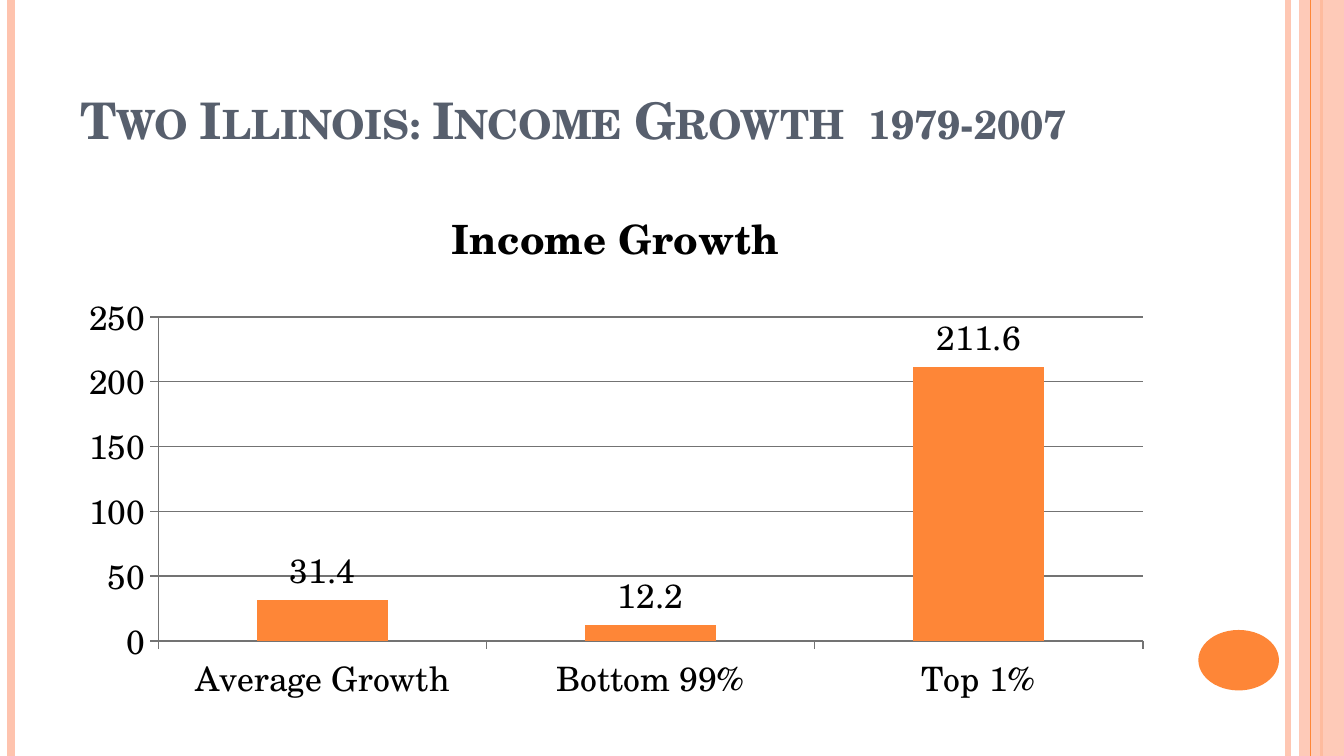
import pptx
import pptx.chart.data
import pptx.dml.color
import pptx.enum.chart
import pptx.enum.shapes
import pptx.enum.text
import pptx.oxml.ns
import pptx.util
from lxml import etree

Pt = pptx.util.Pt
WIDTH, HEIGHT = 720, 405
FONT = "TeX Gyre Schola"
COLORS = {
    "orange": "FE8637",
    "peach": "FEC3AE",
    "slate": "575F6D",
    "black": "000000",
    "axis": "737373",
}


def rgb(name):
    return pptx.dml.color.RGBColor.from_string(COLORS[name])


def set_alpha(element, percent):
    color = element.find(".//" + pptx.oxml.ns.qn("a:srgbClr"))
    alpha = etree.SubElement(color, pptx.oxml.ns.qn("a:alpha"))
    alpha.set("val", str(percent * 1000))


def format_font(font, size, color, bold=False):
    font.name = FONT
    font.size = Pt(size)
    font.bold = bold
    font.color.rgb = rgb(color)


def write_text(frame, text, size=18, color="black", bold=False, small_caps=False):
    paragraph = frame.paragraphs[0]
    run = paragraph.add_run()
    run.text = text
    format_font(run.font, size, color, bold)
    if small_caps:
        run.font._element.set("cap", "small")
    return paragraph


def add_stripe(slide, x, color, width, alpha=100):
    """Draw a full-height vertical line."""
    stripe = slide.shapes.add_connector(
        pptx.enum.shapes.MSO_CONNECTOR.STRAIGHT, Pt(x), 0, Pt(x), Pt(HEIGHT))
    stripe.line.color.rgb = rgb(color)
    stripe.line.width = Pt(width)
    etree.SubElement(stripe._element.spPr, pptx.oxml.ns.qn("a:effectLst"))
    if alpha < 100:
        set_alpha(stripe._element.spPr, alpha)


def add_filled_shape(slide, kind, box, color, alpha=100):
    shape = slide.shapes.add_shape(kind, *map(Pt, box))
    shape.shadow.inherit = False
    shape.fill.solid()
    shape.fill.fore_color.rgb = rgb(color)
    shape.line.fill.background()
    if alpha < 100:
        set_alpha(shape._element.spPr, alpha)


def add_title(slide, text):
    title = slide.shapes.title
    title.left, title.top, title.width, title.height = map(Pt, (36, 16.5, 588, 67.5))
    frame = title.text_frame
    frame.word_wrap = True
    frame.auto_size = pptx.enum.text.MSO_AUTO_SIZE.NONE
    frame.vertical_anchor = pptx.enum.text.MSO_ANCHOR.BOTTOM
    heading = write_text(frame, text, size=27, color="slate", bold=True, small_caps=True)
    heading.alignment = pptx.enum.text.PP_ALIGN.LEFT


def format_axis(axis):
    axis.major_tick_mark = pptx.enum.chart.XL_TICK_MARK.OUTSIDE
    axis.minor_tick_mark = pptx.enum.chart.XL_TICK_MARK.NONE
    axis.format.line.color.rgb = rgb("axis")
    axis.format.line.width = Pt(0.75)


def add_column_chart(slide, box, name, values):
    data = pptx.chart.data.CategoryChartData()
    data.categories = list(values)
    data.add_series(name, list(values.values()))
    chart = slide.shapes.add_chart(
        pptx.enum.chart.XL_CHART_TYPE.COLUMN_CLUSTERED, *map(Pt, box), data).chart
    format_font(chart.font, 18, "black")
    chart.has_legend = False
    chart.has_title = True
    write_text(chart.chart_title.text_frame, name, size=21.6, bold=True)
    chart.chart_title.include_in_layout = False

    format_axis(chart.category_axis)
    format_axis(chart.value_axis)
    gridlines = chart.value_axis.major_gridlines.format.line
    gridlines.color.rgb = rgb("axis")
    gridlines.width = Pt(0.75)

    plot = chart.plots[0]
    plot.gap_width = 150
    plot.vary_by_categories = False
    columns = plot.series[0]
    columns.format.fill.solid()
    columns.format.fill.fore_color.rgb = rgb("orange")
    columns.data_labels.show_value = True
    columns.data_labels.position = pptx.enum.chart.XL_LABEL_POSITION.OUTSIDE_END


def main():
    deck = pptx.Presentation()
    deck.slide_width, deck.slide_height = Pt(WIDTH), Pt(HEIGHT)
    slide = deck.slides.add_slide(deck.slide_layouts.get_by_name("Title Only"))

    shapes = pptx.enum.shapes.MSO_SHAPE
    add_stripe(slide, 690, "peach", 3, alpha=93)
    add_stripe(slide, 6, "peach", 4.5)
    add_stripe(slide, 708, "orange", 1.5)
    add_filled_shape(slide, shapes.RECTANGLE, (696, 0, 24, HEIGHT), "peach", alpha=87)
    add_stripe(slide, 702, "orange", 0.75)
    add_filled_shape(slide, shapes.OVAL, (642, 337.5, 43.2, 32.4), "orange")

    add_title(slide, "Two Illinois: Income Growth  1979-2007")
    add_column_chart(slide, (36, 94.5, 588, 288), "Income Growth", {
        "Average Growth": 31.4,
        "Bottom 99%": 12.2,
        "Top 1%": 211.6,
    })
    deck.save("out.pptx")


if __name__ == "__main__":
    main()
